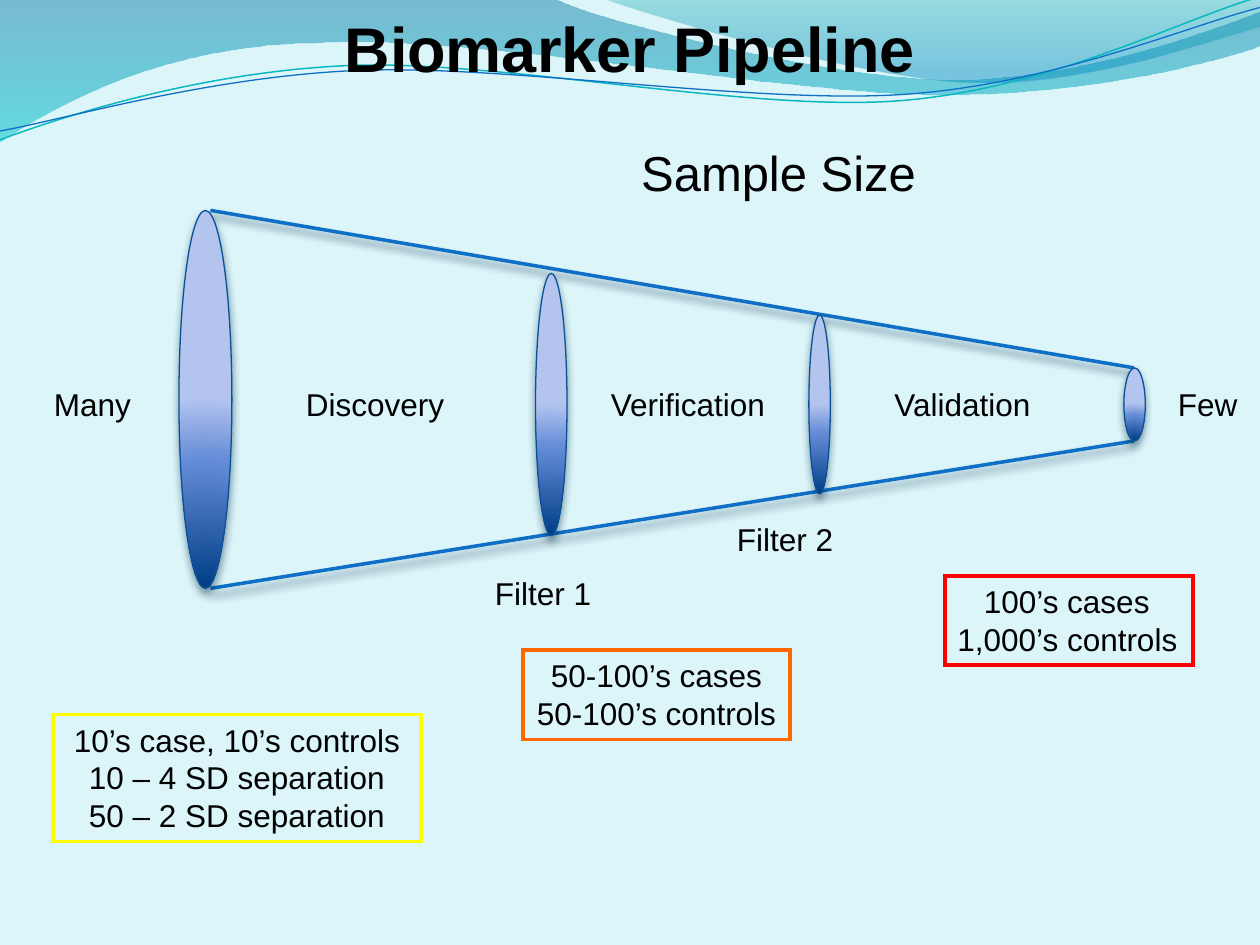
import math
from dataclasses import dataclass

from lxml import etree
from pptx import Presentation
from pptx import util as u
from pptx.dml import color
from pptx.enum import shapes, text
from pptx.oxml import ns


@dataclass(frozen=True)
class Theme:
    """Colours as RRGGBB, type sizes and line widths in points."""
    font: str = "Arial"
    background: str = "DBF5F9"
    ink: str = "000000"
    funnel: str = "0F6FC6"
    wave_line: str = "0AB8BF"
    filter_line: str = "095295"
    line_shadow: str = "002041"
    filter_shadow: str = "042747"
    discovery: str = "FFFF00"
    verification: str = "FF6600"
    validation: str = "FF0000"
    title: int = 36
    heading: int = 28
    body: int = 18
    thin: float = 0.75
    wave_width: float = 0.85
    thick: float = 2
    filter_stops: tuple = ((0, "003D87", 100), (68, "668DD7", 100), (100, "B3C4EF", 100))
    wide_wave: tuple = ((0, "0074A1", 45), (100, "00C6CF", 55))
    right_wave: tuple = ((0, "00A1A9", 30), (80, "008BBF", 45))


THEME = Theme()
LEFT, CENTER = text.PP_ALIGN.LEFT, text.PP_ALIGN.CENTER
LABEL_TOP, LABEL_HEIGHT = 3.01, 0.4
WAVE_TILT = 357.3
FILTERS = ((1.42, 1.67, 0.42, 3), (4.25, 2.17, 0.25, 2.08),
           (6.42, 2.5, 0.17, 1.42), (8.92, 2.92, 0.17, 0.58))
FUNNEL_SIDES = ((1.67, 1.67, 9, 2.92), (1.67, 4.67, 9, 3.5))
STAGES = (("Many", 0.33, 0.82), ("Discovery", 2.33, 1.31), ("Verification", 4.75, 1.45),
          ("Validation", 7, 1.31), ("Few", 9.25, 0.69))
FILTER_LABELS = (("Filter 1", 3.83, 4.51), ("Filter 2", 5.75, 4.08))
SAMPLE_SIZES = (
    (("10’s case, 10’s controls", "10 – 4 SD separation", "50 – 2 SD separation"),
     (0.42, 5.67, 2.92, 1.01), THEME.discovery, dict(wrap=True, align=CENTER)),
    (("50-100’s cases", "50-100’s controls"),
     (4.15, 5.16, 2.12, 0.71), THEME.verification, dict(align=CENTER)),
    (("100’s cases", "1,000’s controls"),
     (7.5, 4.57, 1.97, 0.71), THEME.validation, dict(first_indent=0.21)),
)
FILLED_WAVES = (
    (((0, -0.01), (4.4, -0.01), (4.76, 0.17, 6.64, 0.63, 7.58, 0.63),
      (8.53, 0.63, 9.58, 0.26, 10, 0.09), (10.01, 0.36), (9.83, 0.44, 8.7, 0.76, 7.46, 0.75),
      (6.22, 0.75, 3.82, 0.28, 2.57, 0.34), (1.29, 0.35, 0.46, 0.83, -0.01, 1.13)),
     THEME.wide_wave),
    (((4.79, -0.01), (5.09, 0.11, 6.82, 0.62, 7.69, 0.65), (8.56, 0.69, 9.61, 0.32, 10, 0.21),
      (10, 0)), THEME.right_wave),
)
WAVE_LINES = (
    (((0, 1.11), (0.48, 0.93, 1.58, 0.57, 2.77, 0.52), (3.95, 0.47, 5.93, 0.89, 7.13, 0.8),
      (8.33, 0.71, 9.38, 0.15, 9.98, -0.02)), (4.99, 0.57), THEME.wave_line, THEME.wave_width),
    (((0, 1.04), (0.47, 0.96, 1.64, 0.61, 2.83, 0.56), (4.03, 0.51, 5.97, 0.83, 7.17, 0.75),
      (8.36, 0.67, 9.41, 0.21, 10, 0.06)), (5, 0.59), THEME.funnel, THEME.thin),
)


def apply_format(target, values):
    """Set every attribute named in a dict."""
    for name, value in values.items():
        setattr(target, name, value)


def add_xml(parent, tag, **attributes):
    """Append a DrawingML element and return it."""
    return etree.SubElement(parent, ns.qn(tag), {key: str(value) for key, value in attributes.items()})


def add_color(parent, rgb, opacity):
    """Append a colour with its opacity in percent."""
    add_xml(add_xml(parent, "a:srgbClr", val=rgb), "a:alpha", val=opacity * 1000)


def set_line(shape, rgb, width):
    """Give an outline its colour and width."""
    shape.line.color.rgb = color.RGBColor.from_string(rgb)
    shape.line.width = u.Pt(width)


def set_gradient(shape, stops, circular=False):
    """Fill a shape with a vertical or a circular gradient."""
    shape.fill.background()
    empty_fill = shape._element.spPr.find(ns.qn("a:noFill"))
    gradient = etree.Element(ns.qn("a:gradFill"), rotWithShape="1")
    stop_list = add_xml(gradient, "a:gsLst")
    for position, rgb, opacity in stops:
        add_color(add_xml(stop_list, "a:gs", pos=position * 1000), rgb, opacity)
    if circular:
        circle = add_xml(gradient, "a:path", path="circle")
        add_xml(circle, "a:fillToRect", l=50000, t=130000, r=50000, b=-30000)
    else:
        add_xml(gradient, "a:lin", ang=5400000, scaled=1)
    empty_fill.getparent().replace(empty_fill, gradient)


def set_shadow(shape, rgb):
    """Drop a soft shadow straight below a shape."""
    effects = add_xml(shape._element.spPr, "a:effectLst")
    shadow = add_xml(effects, "a:outerShdw", blurRad=u.Pt(4.5), dist=u.Pt(3),
                     dir=5400000, rotWithShape=0)
    add_color(shadow, rgb, 48)


def turn(point, centre, degrees):
    """Turn a point clockwise around a centre."""
    sine, cosine = math.sin(math.radians(degrees)), math.cos(math.radians(degrees))
    x, y = point[0] - centre[0], point[1] - centre[1]
    return centre[0] + x * cosine - y * sine, centre[1] + x * sine + y * cosine


def add_wave(slide, outline, closed, centre=(0, 0), tilt=0):
    """Draw a wave of straight and cubic segments as a freeform."""
    points = [turn(segment[i:i + 2], centre, -tilt)
              for segment in outline for i in range(0, len(segment), 2)]
    points = [(u.Inches(x), u.Inches(y)) for x, y in points]
    builder = slide.shapes.build_freeform(*points[0])
    builder.add_line_segments(points[1:], close=closed)
    shape = builder.convert_to_shape()
    steps = shape._element.findall(".//" + ns.qn("a:lnTo"))
    for segment in outline[1:]:
        first, *others = [steps.pop(0) for _ in range(len(segment) // 2)]
        if others:
            first.tag = ns.qn("a:cubicBezTo")
        for other in others:
            first.append(other[0])
            other.getparent().remove(other)
    shape.rotation = tilt
    shape.shadow.inherit = False
    shape.fill.background()
    shape.line.fill.background()
    return shape


def add_filter(slide, box):
    """Draw one elliptical filter of the funnel."""
    shape = slide.shapes.add_shape(shapes.MSO_SHAPE.OVAL, *map(u.Inches, box))
    set_gradient(shape, THEME.filter_stops, circular=True)
    set_line(shape, THEME.filter_line, THEME.thin)
    set_shadow(shape, THEME.filter_shadow)


def add_funnel_side(slide, ends):
    """Draw one sloping side of the funnel."""
    side = slide.shapes.add_connector(shapes.MSO_CONNECTOR.STRAIGHT, *map(u.Inches, ends))
    set_line(side, THEME.funnel, THEME.thick)
    set_shadow(side, THEME.line_shadow)


def write_text(shape, lines, size=THEME.body, bold=False, wrap=False, align=LEFT,
               anchor=text.MSO_ANCHOR.TOP, fit=text.MSO_AUTO_SIZE.SHAPE_TO_FIT_TEXT, first_indent=0):
    """Write paragraphs of one style into a shape."""
    frame = shape.text_frame
    apply_format(frame, {"text": "\n".join(lines), "word_wrap": wrap,
                         "vertical_anchor": anchor, "auto_size": fit})
    for paragraph in frame.paragraphs:
        paragraph.alignment = align
        apply_format(paragraph.runs[0].font, {"name": THEME.font, "size": u.Pt(size), "bold": bold})
        paragraph.runs[0].font.color.rgb = color.RGBColor.from_string(THEME.ink)
    if first_indent:
        frame.paragraphs[0]._p.get_or_add_pPr().set("marL", str(u.Inches(first_indent)))


def add_label(slide, label, box, **style):
    """Add a text box with one line."""
    write_text(slide.shapes.add_textbox(*map(u.Inches, box)), [label], **style)


def add_sample_size(slide, lines, box, rgb, style):
    """Add a framed note on the sample size of a stage."""
    shape = slide.shapes.add_shape(shapes.MSO_SHAPE.RECTANGLE, *map(u.Inches, box))
    shape.shadow.inherit = False
    shape.fill.background()
    set_line(shape, rgb, THEME.thick)
    add_xml(shape._element.spPr.find(ns.qn("a:ln")), "a:miter", lim=800000)
    write_text(shape, lines, **style)


def main():
    """Build the slide and save it."""
    presentation = Presentation()
    apply_format(presentation, {"slide_width": u.Inches(10), "slide_height": u.Inches(7.5)})
    slide = presentation.slides.add_slide(presentation.slide_layouts[6])
    slide.background.fill.solid()
    slide.background.fill.fore_color.rgb = color.RGBColor.from_string(THEME.background)
    for outline, stops in FILLED_WAVES:
        set_gradient(add_wave(slide, outline, closed=True), stops)
    for outline, centre, rgb, width in WAVE_LINES:
        set_line(add_wave(slide, outline, False, centre, WAVE_TILT), rgb, width)
    add_label(slide, "Biomarker Pipeline", (0, 0, 10, 0.75), size=THEME.title, bold=True, wrap=True,
              align=CENTER, anchor=text.MSO_ANCHOR.MIDDLE, fit=text.MSO_AUTO_SIZE.NONE)
    for ends in FUNNEL_SIDES:
        add_funnel_side(slide, ends)
    for box in FILTERS:
        add_filter(slide, box)
    add_label(slide, "Sample Size", (4.99, 1.08, 2.41, 0.57), size=THEME.heading)
    for label, left, width in STAGES:
        add_label(slide, label, (left, LABEL_TOP, width, LABEL_HEIGHT))
    for label, left, top in FILTER_LABELS:
        add_label(slide, label, (left, top, 0.97, LABEL_HEIGHT))
    for note in SAMPLE_SIZES:
        add_sample_size(slide, *note)
    presentation.save("out.pptx")


if __name__ == "__main__":
    main()
